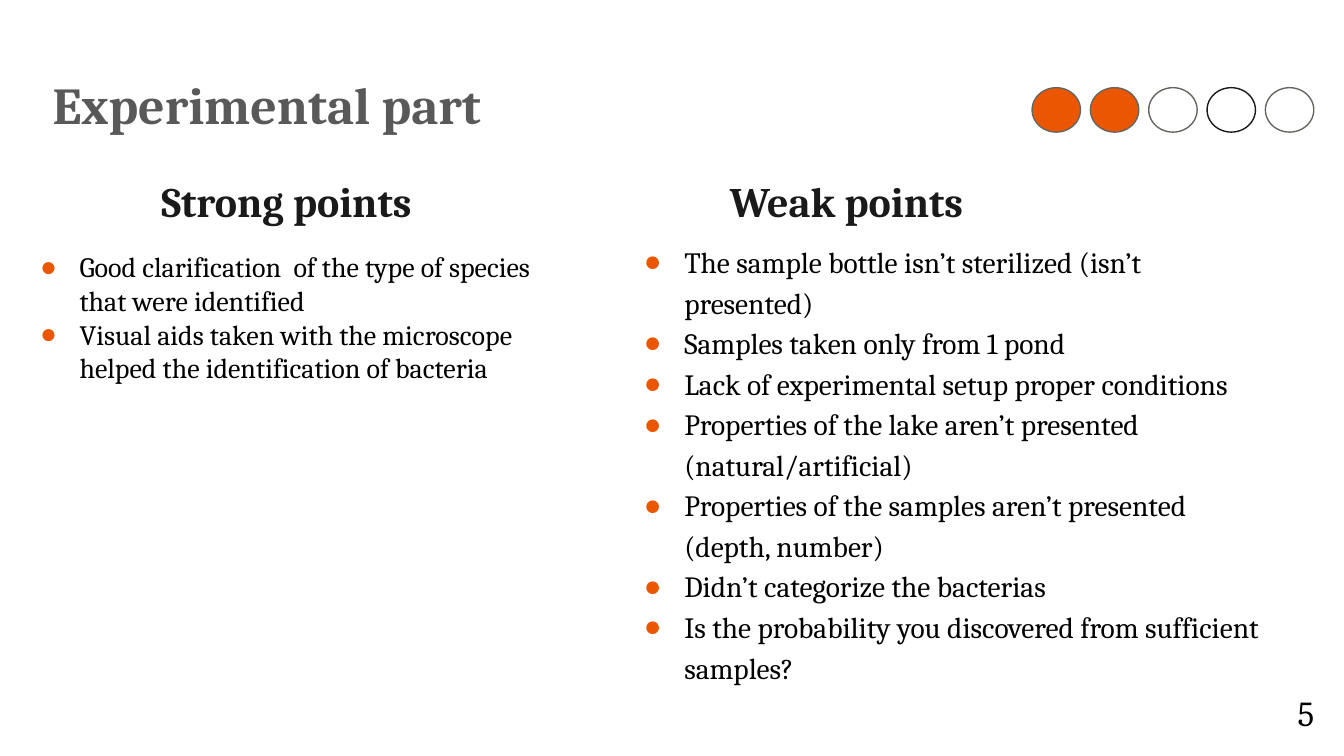
from lxml import etree
from pptx import Presentation
from pptx import util as u
from pptx.dml.color import RGBColor
from pptx.enum import shapes, text
from pptx.oxml import ns

ORANGE = RGBColor(0xEB, 0x56, 0x00)
GREY = RGBColor(0x59, 0x59, 0x59)
OUTLINE = RGBColor(0x66, 0x66, 0x61)
DARK = RGBColor(0x1A, 0x1A, 0x1A)
BLACK = RGBColor(0, 0, 0)
WHITE = RGBColor(0xFF, 0xFF, 0xFF)

STRONG_POINTS = [
    "Good clarification  of the type of species that were identified",
    "Visual aids taken with the microscope helped the identification of bacteria",
]
WEAK_POINTS = [
    "The sample bottle isn’t sterilized (isn’t presented)",
    "Samples taken only from 1 pond",
    "Lack of experimental setup proper conditions",
    "Properties of the lake aren’t presented (natural/artificial)",
    "Properties of the samples aren’t presented (depth, number)",
    "Didn’t categorize the bacterias",
    "Is the probability you discovered from sufficient samples?",
]
PROGRESS = [(ORANGE, OUTLINE), (ORANGE, OUTLINE), (WHITE, OUTLINE), (None, DARK), (None, OUTLINE)]


class PointsSlide:
    font = "Cambria"

    def __init__(self, prs):
        self.s = prs.slides.add_slide(prs.slide_layouts[4])

    def set_text(self, sp, lines, size, color, bold=False, spacing=1.0,
                 anchor=text.MSO_ANCHOR.TOP, align=text.PP_ALIGN.LEFT):
        tf = sp.text_frame
        tf.text = "\n".join(lines)
        tf.word_wrap = True
        tf.auto_size = text.MSO_AUTO_SIZE.NONE
        tf.vertical_anchor = anchor
        for p in tf.paragraphs:
            p.alignment = align
            p.line_spacing = spacing
            p.space_before = p.space_after = u.Pt(0)
            for r in p.runs:
                r.font.name = self.font
                r.font.size = u.Pt(size)
                r.font.bold = bold
                r.font.color.rgb = color

    def place(self, idx, box):
        sp = self.s.placeholders[idx]
        sp.left, sp.top, sp.width, sp.height = map(u.Cm, box)
        return sp

    def title(self, words, box):
        self.set_text(self.place(0, box), [words], 37, GREY, True, 0.89)

    def heading(self, idx, words, box):
        self.set_text(self.place(idx, box), [words], 30, DARK, True, 0.84, text.MSO_ANCHOR.BOTTOM)

    def bullets(self, idx, items, box, size, spacing, hang):
        sp = self.place(idx, box)
        self.set_text(sp, items, size, BLACK, spacing=spacing)
        for p in sp.text_frame.paragraphs:
            pPr = p._p.get_or_add_pPr()
            pPr.set("marL", str(u.Cm(1.27)))
            pPr.set("indent", str(-u.Cm(hang)))
            clr = etree.SubElement(pPr, ns.qn("a:buClr"))
            etree.SubElement(clr, ns.qn("a:srgbClr"), val=str(ORANGE))
            etree.SubElement(pPr, ns.qn("a:buChar"), char="●")

    def circle(self, box, fill, line):
        sp = self.s.shapes.add_shape(shapes.MSO_SHAPE.OVAL, *map(u.Cm, box))
        sp.shadow.inherit = False
        if fill is None:
            sp.fill.background()
        else:
            sp.fill.solid()
            sp.fill.fore_color.rgb = fill
        sp.line.color.rgb = line
        sp.line.width = u.Pt(1)

    def number(self, words, box):
        sp = self.s.shapes.add_textbox(*map(u.Cm, box))
        self.set_text(sp, [words], 25, BLACK, anchor=text.MSO_ANCHOR.MIDDLE, align=text.PP_ALIGN.RIGHT)


def main():
    prs = Presentation()
    prs.slide_width, prs.slide_height = u.Cm(33.87), u.Cm(19.05)
    s = PointsSlide(prs)
    s.title("Experimental part", (1.07, 1.9, 13.61, 2.41))
    s.heading(1, "Strong points", (3.81, 3.53, 12.34, 2.29))
    s.bullets(2, STRONG_POINTS, (0.48, 6.17, 14.2, 11.84), 20, 1.0, 0.99)
    s.heading(3, "Weak points", (18.14, 3.53, 12.34, 2.29))
    s.bullets(4, WEAK_POINTS, (15.72, 5.89, 16.26, 11.33), 21, 1.15, 1.02)
    for i, (fill, line) in enumerate(PROGRESS):
        s.circle((26.01 + 1.47 * i, 2.21, 1.22, 1.12), fill, line)
    s.number("5", (31.34, 17.22, 2.03, 1.45))
    prs.save("out.pptx")


if __name__ == "__main__":
    main()
